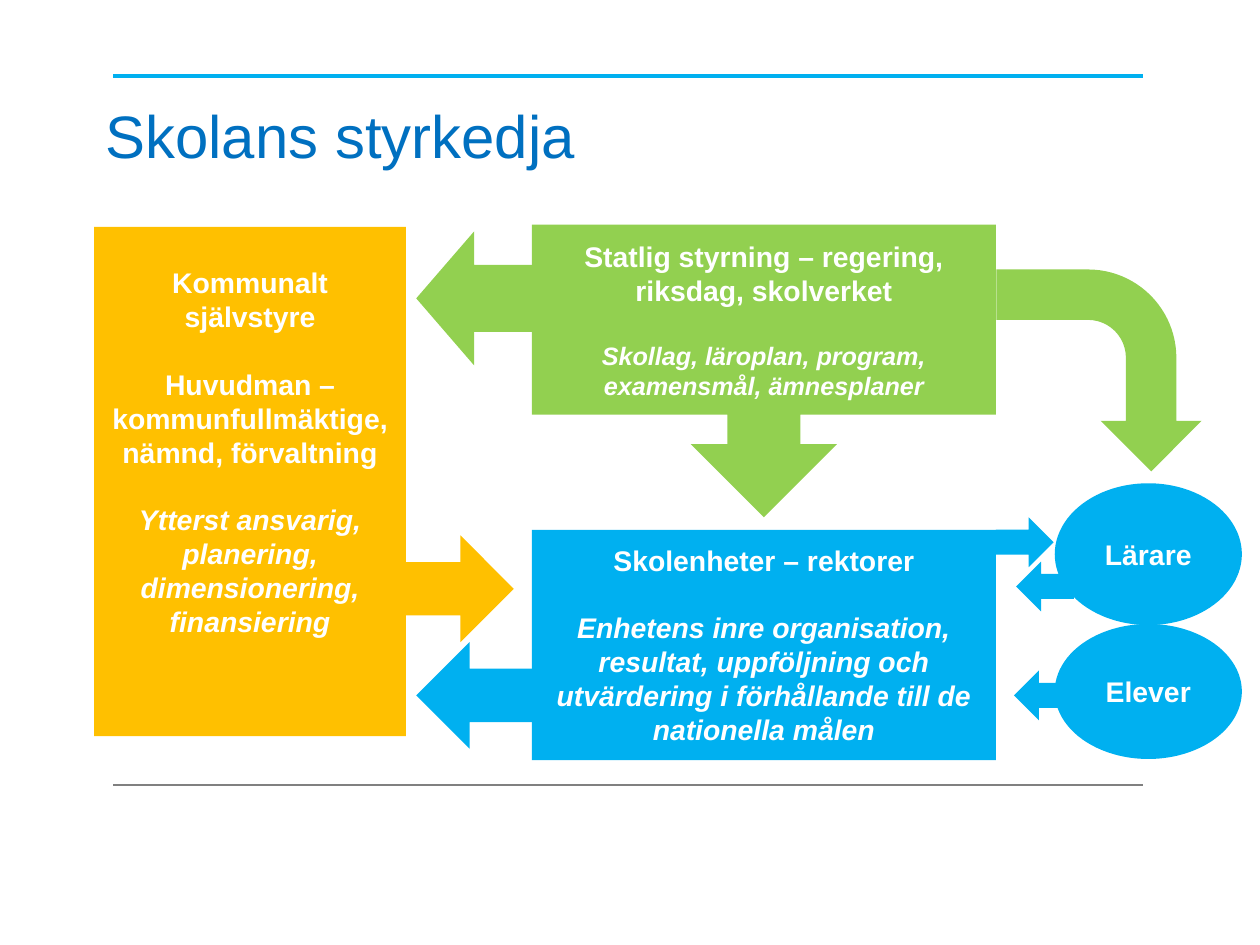
from dataclasses import dataclass

from lxml.etree import SubElement
from pptx import Presentation
from pptx.dml.color import RGBColor
from pptx.enum.shapes import MSO_CONNECTOR, MSO_SHAPE
from pptx.enum.text import MSO_ANCHOR, PP_ALIGN
from pptx.oxml.ns import qn
from pptx.util import Inches, Pt


@dataclass(frozen=True)
class Theme:
    font: str = "Arial"
    title_color: str = "0070C0"
    text_color: str = "FFFFFF"
    state: str = "92D050"
    municipality: str = "FFC000"
    school: str = "00B0F0"
    footer_rule: str = "808080"
    title_size: int = 38
    body_size: int = 18
    small_size: int = 16
    section_gap: int = 21


THEME = Theme()


def write_text(paragraph, text, size=THEME.body_size, color=THEME.text_color,
               bold=True, italic=False, align=PP_ALIGN.CENTER, gap=0):
    paragraph.text = text
    paragraph.alignment = align
    paragraph.space_before = Pt(gap)
    font = paragraph.font
    font.name = THEME.font
    font.size = Pt(size)
    font.bold = bold
    font.italic = italic
    font.color.rgb = RGBColor.from_string(color)


class SlideBuilder:
    def __init__(self, presentation, theme):
        self.theme = theme
        self.slide = presentation.slides.add_slide(presentation.slide_layouts[5])

    def title(self, text, left, top, width, height):
        title = self.slide.shapes.title
        title.left, title.top = Inches(left), Inches(top)
        title.width, title.height = Inches(width), Inches(height)
        frame = title.text_frame
        frame.margin_left = frame.margin_right = Inches(0.04)
        frame.margin_top = frame.margin_bottom = Inches(0.04)
        frame.vertical_anchor = MSO_ANCHOR.MIDDLE
        write_text(frame.paragraphs[0], text, size=self.theme.title_size,
                   color=self.theme.title_color, bold=False, align=PP_ALIGN.LEFT)

    def rule(self, top, color, weight):
        connector = self.slide.shapes.add_connector(
            MSO_CONNECTOR.STRAIGHT, Inches(1), Inches(top), Inches(10.08), Inches(top))
        connector.line.color.rgb = RGBColor.from_string(color)
        connector.line.width = Pt(weight)
        SubElement(connector.element.spPr, qn("a:effectLst"))

    def block(self, kind, color, left, top, width, height, rotation=0):
        shape = self.slide.shapes.add_shape(
            kind, Inches(left), Inches(top), Inches(width), Inches(height))
        shape.shadow.inherit = False
        shape.fill.solid()
        shape.fill.fore_color.rgb = RGBColor.from_string(color)
        shape.line.fill.background()
        shape.rotation = rotation
        return shape

    def labelled_block(self, kind, color, left, top, width, height, lines,
                       top_margin=None):
        shape = self.block(kind, color, left, top, width, height)
        frame = shape.text_frame
        frame.word_wrap = True
        frame.vertical_anchor = MSO_ANCHOR.MIDDLE
        if top_margin is not None:
            frame.vertical_anchor = MSO_ANCHOR.TOP
            frame.margin_top = Inches(top_margin)
        for index, (text, style) in enumerate(lines):
            paragraph = frame.add_paragraph() if index else frame.paragraphs[0]
            write_text(paragraph, text, **style)


def main():
    presentation = Presentation()
    presentation.slide_width, presentation.slide_height = Inches(11.11), Inches(8.33)
    builder = SlideBuilder(presentation, THEME)
    gap = THEME.section_gap

    builder.rule(0.67, THEME.school, 3)
    builder.rule(6.92, THEME.footer_rule, 1)
    builder.title("Skolans styrkedja", 0.89, 0.83, 7.5, 0.72)

    builder.labelled_block(
        MSO_SHAPE.DOWN_ARROW_CALLOUT, THEME.state, 4.69, 1.98, 4.09, 2.58,
        [("Statlig styrning – regering, riksdag, skolverket", {}),
         ("Skollag, läroplan, program, examensmål, ämnesplaner",
          {"size": THEME.small_size, "italic": True, "gap": gap})])
    builder.labelled_block(
        MSO_SHAPE.RECTANGLE, THEME.school, 4.69, 4.67, 4.09, 2.03,
        [("Skolenheter – rektorer", {}),
         ("Enhetens inre organisation, resultat, uppföljning och utvärdering "
          "i förhållande till de nationella målen", {"italic": True, "gap": gap})])
    builder.labelled_block(
        MSO_SHAPE.RECTANGLE, THEME.municipality, 0.83, 2, 2.75, 4.49,
        [("Kommunalt självstyre", {}),
         ("Huvudman – kommunfullmäktige, nämnd, förvaltning", {"gap": gap}),
         ("Ytterst ansvarig,", {"italic": True, "gap": gap}),
         ("planering, dimensionering, finansiering", {"italic": True})],
        top_margin=0.34)

    for label, top, height in (("Lärare", 4.26, 1.25), ("Elever", 5.5, 1.19)):
        builder.labelled_block(MSO_SHAPE.OVAL, THEME.school, 9.3, top, 1.65, height,
                               [(label, {})])

    builder.block(MSO_SHAPE.BENT_ARROW, THEME.state, 8.8, 2.36, 1.78, 1.81, rotation=90)
    for kind, color, left, top, width, height in (
        (MSO_SHAPE.RIGHT_ARROW, THEME.municipality, 3.51, 4.72, 1.02, 0.94),
        (MSO_SHAPE.LEFT_ARROW, THEME.state, 3.67, 2.04, 1.02, 1.18),
        (MSO_SHAPE.LEFT_ARROW, THEME.school, 3.67, 5.66, 1.02, 0.94),
        (MSO_SHAPE.RIGHT_ARROW, THEME.school, 8.78, 4.56, 0.51, 0.44),
        (MSO_SHAPE.LEFT_ARROW, THEME.school, 8.96, 4.95, 0.51, 0.44),
        (MSO_SHAPE.LEFT_ARROW, THEME.school, 8.94, 5.91, 0.51, 0.44),
    ):
        builder.block(kind, color, left, top, width, height)

    presentation.save("out.pptx")


if __name__ == "__main__":
    main()
